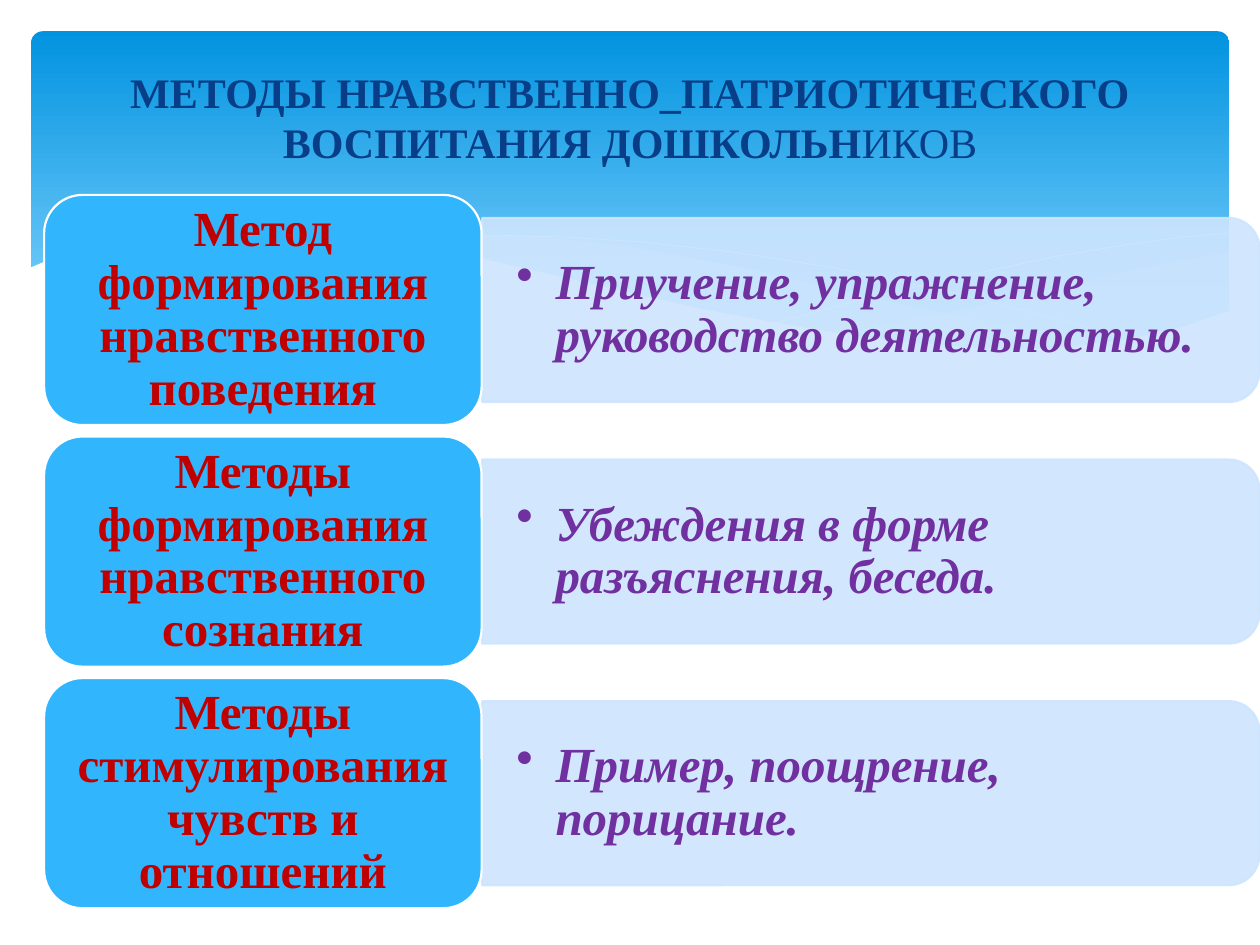
from dataclasses import dataclass
from lxml.etree import SubElement
from pptx import Presentation
from pptx.dml.color import RGBColor
from pptx.enum.shapes import MSO_SHAPE
from pptx.enum.text import MSO_ANCHOR, PP_ALIGN
from pptx.oxml.ns import qn
from pptx.util import Cm, Pt


@dataclass(frozen=True)
class Theme:
    font: str = "Times New Roman"
    title_size: int = 24
    body_size: int = 28
    title: str = "073E87"
    sky_top: str = "0293E0"
    sky_end: str = "83D3FE"
    mist: str = "C6E7FC"
    white: str = "FFFFFF"
    card: str = "31B6FD"
    panel: str = "CEE5FE"
    method: str = "C00000"
    means: str = "7030A0"
    edge: float = 1.25
    hair: float = 0.25


class Deck:
    def __init__(self, slide, theme):
        self.slide = slide
        self.shapes = slide.shapes
        self.theme = theme

    def paint(self, shape, fill=None, line=None, width=0, alpha=100):
        """Set fill and line; alpha is the opacity in percent."""
        shape.shadow.inherit = False
        for part, color in ((shape.fill, fill), (shape.line.fill, line)):
            if color is None:
                part.background()
            else:
                part.solid()
                part.fore_color.rgb = RGBColor.from_string(color)
        if line:
            shape.line.width = Pt(width)
        if alpha < 100:
            for tone in shape._element.spPr.iter(qn("a:srgbClr")):
                SubElement(tone, qn("a:alpha"), val=str(alpha * 1000))

    def label(self, shape, text, color, size, pad=(0.25, 0.13), **style):
        """Fill a shape with one paragraph, centred vertically."""
        frame = shape.text_frame
        frame.word_wrap = True
        frame.vertical_anchor = MSO_ANCHOR.MIDDLE
        frame.margin_left = frame.margin_right = Cm(pad[0])
        frame.margin_top = frame.margin_bottom = Cm(pad[1])
        para = frame.paragraphs[0]
        para.text = text
        font = para.font
        font.name, font.size = self.theme.font, Pt(size)
        font.color.rgb = RGBColor.from_string(color)
        font.bold = style.get("bold", True)
        font.italic = style.get("italic", False)
        para.alignment = style.get("align", PP_ALIGN.CENTER)
        return para

    def sky(self, left, top, width, height):
        box = self.shapes.add_shape(MSO_SHAPE.ROUNDED_RECTANGLE,
                                    Cm(left), Cm(top), Cm(width), Cm(height))
        box.adjustments[0] = 0.034
        self.paint(box)
        box.fill.gradient()
        box.fill.gradient_angle = 270
        stops = box.fill.gradient_stops
        colors = (self.theme.sky_top, self.theme.sky_end)
        for stop, color, place in zip(stops, colors, (0, 0.9)):
            stop.color.rgb = RGBColor.from_string(color)
            stop.position = place

    def wave(self, points, closed=True, **look):
        spots = [(Cm(x), Cm(y)) for x, y in points]
        pen = self.shapes.build_freeform(*spots[0])
        pen.add_line_segments(spots[1:], close=closed)
        self.paint(pen.convert_to_shape(), **look)

    def panel(self, left, mid, width, height, text):
        # The shape stands upright, then turns so its round end faces right
        theme = self.theme
        bar = self.shapes.add_shape(
            MSO_SHAPE.ROUND_2_SAME_RECTANGLE,
            Cm(left + (width - height) / 2), Cm(mid - width / 2),
            Cm(height), Cm(width))
        bar.rotation = 90
        self.paint(bar, theme.panel, theme.panel, theme.edge, alpha=90)
        box = self.shapes.add_textbox(Cm(left), Cm(mid - height / 2),
                                      Cm(width - 0.18), Cm(height))
        para = self.label(box, text, theme.means, theme.body_size,
                          pad=(0.69, 0.35), italic=True, align=PP_ALIGN.LEFT)
        para.line_spacing = 0.9
        props = para._p.get_or_add_pPr()
        props.set("marL", str(Cm(0.79)))
        props.set("indent", str(-Cm(0.79)))
        SubElement(props, qn("a:buChar"), char="•")
        # Bullet must come before the default run properties
        props.append(props.find(qn("a:defRPr")))

    def card(self, left, top, width, height, text):
        theme = self.theme
        box = self.shapes.add_shape(MSO_SHAPE.ROUNDED_RECTANGLE,
                                    Cm(left), Cm(top), Cm(width), Cm(height))
        self.paint(box, theme.card, theme.white, theme.edge)
        para = self.label(box, text, theme.method, theme.body_size,
                          pad=(0.3, 0.15))
        para.line_spacing = 0.9

    def title(self, left, top, width, height, strong, plain):
        head = self.shapes.title
        head.left, head.top = Cm(left), Cm(top)
        head.width, head.height = Cm(width), Cm(height)
        para = self.label(head, strong, self.theme.title,
                          self.theme.title_size)
        tail = para.add_run()
        tail.text = plain
        tail.font.bold = False
        # Bring the title in front of the background
        self.shapes._spTree.append(head._element)


# Background curves, in centimetres
RIGHT = [(24.79, 5.08), (23.75, 5.26), (22.63, 5.49), (21.13, 5.84),
         (19.13, 6.3), (16.79, 6.73), (17.91, 6.88), (19.23, 7.01),
         (20.68, 7.06), (21.92, 6.99), (22.99, 6.83), (23.93, 6.58),
         (24.79, 6.27)]
WIDE = [(22.68, 6.93), (20.5, 6.6), (18.82, 6.27), (16.97, 5.87),
        (15.19, 5.44), (13.74, 5.16), (12.42, 4.93), (10.67, 4.75),
        (9.17, 4.7), (7.26, 4.85), (8.69, 5.05), (10.26, 5.36),
        (12.47, 5.89), (14.38, 6.3), (16.1, 6.63), (18.01, 6.91),
        (19.63, 7.04), (21.29, 7.06)]
FALL = [(7.85, 4.95), (8.97, 4.8), (10.19, 4.75), (11.43, 4.78),
        (12.95, 4.88), (14.78, 5.08), (16.89, 5.41), (19.3, 5.92),
        (21.11, 6.38), (23.04, 6.91)]
RISE = [(15.57, 6.53), (17.07, 6.12), (19, 5.66), (21.23, 5.18),
        (22.73, 4.93), (23.83, 4.78), (24.77, 4.7)]
GROUND = [(0.58, 5.41), (1.17, 5.16), (1.93, 4.95), (2.69, 4.8),
          (3.71, 4.7), (4.9, 4.67), (6.35, 4.72), (7.42, 4.83),
          (8.64, 5), (9.93, 5.26), (11.35, 5.59), (12.78, 5.92),
          (14.1, 6.22), (15.32, 6.45), (16.46, 6.65), (17.98, 6.86),
          (19.33, 6.99), (20.55, 7.04), (21.59, 6.99), (22.83, 6.83),
          (23.88, 6.58), (24.82, 6.25), (24.82, 8.36), (0.58, 8.36)]

METHODS = [
    ("Метод формирования нравственного поведения",
     "Приучение, упражнение, руководство деятельностью."),
    ("Методы формирования нравственного сознания",
     "Убеждения в форме разъяснения, беседа."),
    ("Методы стимулирования чувств и отношений",
     "Пример, поощрение, порицание."),
]


def main():
    show = Presentation()
    show.slide_width, show.slide_height = Cm(25.4), Cm(19.05)
    theme = Theme()
    deck = Deck(show.slides.add_slide(show.slide_layouts[5]), theme)

    # Background: sky, ribbons, thin lines, white ground
    deck.sky(0.63, 0.63, 24.15, 6.86)
    deck.wave(RIGHT, fill=theme.mist, alpha=29)
    deck.wave(WIDE, fill=theme.mist, alpha=40)
    for curve in (FALL, RISE):
        deck.wave(curve, closed=False, line=theme.white, width=theme.hair)
    deck.wave(GROUND, fill=theme.white)

    # Rows: a method card and the panel of its means
    top, step, height = 3.93, 4.87, 4.64
    for row, (method, means) in enumerate(METHODS):
        y = top + row * step
        deck.panel(9.72, y + height / 2, 15.67, 3.71, means)
        deck.card(0.89, y, 8.82, height, method)

    # Title
    deck.title(1.27, 0.95, 22.86, 2.8,
               "МЕТОДЫ НРАВСТВЕННО_ПАТРИОТИЧЕСКОГО ВОСПИТАНИЯ ДОШКОЛЬН",
               "ИКОВ")
    show.save("out.pptx")


if __name__ == "__main__":
    main()
